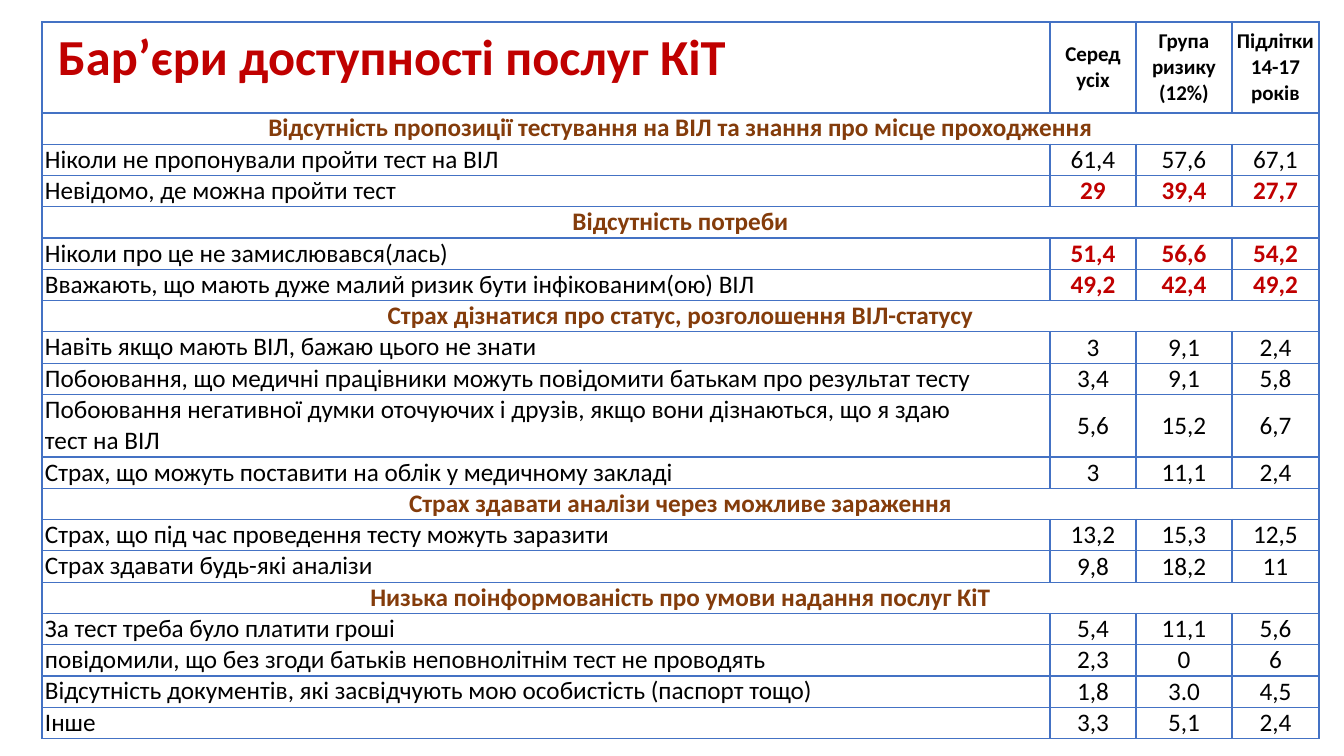
from dataclasses import dataclass

from lxml import etree
from pptx import Presentation
from pptx import util as u
from pptx.dml.color import RGBColor
from pptx.enum import text
from pptx.oxml import ns
from pptx.table import Table, _Cell

PX = 914400 / 100.8
COLORS = {"black": "000000", "white": "FFFFFF", "red": "C00000",
          "brown": "843C0B", "border": "4472C4"}
FONT = "Calibri"
COLUMN_WIDTHS = (1008, 86, 96, 87)
TABLE_LEFT, TABLE_TOP, HEADER_HEIGHT = 42, 22, 91
LINE_HEIGHT = 31.3
ALIGN, ANCHOR = text.PP_ALIGN, text.MSO_ANCHOR


@dataclass(frozen=True)
class Barrier:
    label: str
    values: tuple[str, str, str]
    highlighted: bool = False


@dataclass(frozen=True)
class Section:
    title: str
    barriers: tuple[Barrier, ...]


TITLE = "Бар’єри доступності послуг КіТ"
GROUPS = ("Серед усіх", "Група ризику (12%)", "Підлітки\n14-17 років")
SECTIONS = (
    Section("Відсутність пропозиції тестування на ВІЛ та знання про місце проходження", (
        Barrier("Ніколи не пропонували пройти тест на ВІЛ", ("61,4", "57,6", "67,1")),
        Barrier("Невідомо, де можна пройти тест", ("29", "39,4", "27,7"), True),
    )),
    Section("Відсутність потреби", (
        Barrier("Ніколи про це не замислювався(лась)", ("51,4", "56,6", "54,2"), True),
        Barrier("Вважають, що мають дуже малий ризик бути інфікованим(ою) ВІЛ",
                ("49,2", "42,4", "49,2"), True),
    )),
    Section("Страх дізнатися про статус, розголошення ВІЛ-статусу", (
        Barrier("Навіть якщо мають ВІЛ, бажаю цього не знати", ("3", "9,1", "2,4")),
        Barrier("Побоювання, що медичні працівники можуть повідомити батькам про результат тесту",
                ("3,4", "9,1", "5,8")),
        Barrier("Побоювання негативної думки оточуючих і друзів, якщо вони дізнаються, що я здаю\n"
                "тест на ВІЛ", ("5,6", "15,2", "6,7")),
        Barrier("Страх, що можуть поставити на облік у медичному закладі", ("3", "11,1", "2,4")),
    )),
    Section("Страх здавати аналізи через можливе зараження", (
        Barrier("Страх, що під час проведення тесту можуть заразити", ("13,2", "15,3", "12,5")),
        Barrier("Страх здавати будь-які аналізи", ("9,8", "18,2", "11")),
    )),
    Section("Низька поінформованість про умови надання послуг КіТ", (
        Barrier("За тест треба було платити гроші", ("5,4", "11,1", "5,6")),
        Barrier("повідомили, що без згоди батьків неповнолітнім тест не проводять",
                ("2,3", "0", "6")),
        Barrier("Відсутність документів, які засвідчують мою особистість (паспорт тощо)",
                ("1,8", "3.0", "4,5")),
        Barrier("Інше", ("3,3", "5,1", "2,4")),
    )),
)


def emu(pixels: float) -> u.Emu:
    return u.Emu(round(pixels * PX))


def style_cell(cell: _Cell, row: int) -> None:
    """Draw the borders, then the fill; the line under the header is thicker."""
    properties = cell._tc.get_or_add_tcPr()
    thick_side = {0: "B", 1: "T"}.get(row)
    for side in "LRTB":
        width = u.Pt(2 if side == thick_side else 1)
        line = etree.SubElement(properties, ns.qn(f"a:ln{side}"), w=str(width))
        fill = etree.SubElement(line, ns.qn("a:solidFill"))
        etree.SubElement(fill, ns.qn("a:srgbClr"), val=COLORS["border"])
    cell.fill.solid()
    cell.fill.fore_color.rgb = RGBColor.from_string(COLORS["white"])


def write_cell(cell: _Cell, content: str, *, size: int = 18, color: str = "black",
               bold: bool = False, align: ALIGN = ALIGN.CENTER, anchor: ANCHOR = ANCHOR.MIDDLE,
               left: int = 3, bottom: int = 0) -> None:
    cell.margin_left, cell.margin_right = emu(left), emu(3)
    cell.margin_top, cell.margin_bottom = 0, emu(bottom)
    cell.vertical_anchor = anchor
    cell.text_frame.text = content
    for paragraph in cell.text_frame.paragraphs:
        paragraph.alignment = align
        font = paragraph.runs[0].font
        font.name, font.size, font.bold = FONT, u.Pt(size), bold
        font.color.rgb = RGBColor.from_string(COLORS[color])


def write_section(table: Table, row: int, title: str) -> None:
    heading = table.cell(row, 0)
    heading.merge(table.cell(row, len(COLUMN_WIDTHS) - 1))
    write_cell(heading, title, color="brown", bold=True, anchor=ANCHOR.TOP)


def write_barrier(table: Table, row: int, barrier: Barrier) -> None:
    write_cell(table.cell(row, 0), barrier.label, align=ALIGN.JUSTIFY, anchor=ANCHOR.TOP)
    for column, value in enumerate(barrier.values, 1):
        write_cell(table.cell(row, column), value, bold=barrier.highlighted,
                   color="red" if barrier.highlighted else "black")


def main() -> None:
    presentation = Presentation()
    presentation.slide_width, presentation.slide_height = emu(1344), emu(756)
    slide = presentation.slides.add_slide(presentation.slide_layouts[6])

    # Table grid
    entries = [entry for section in SECTIONS for entry in (section, *section.barriers)]
    heights = [HEADER_HEIGHT] + [
        LINE_HEIGHT * (1 + entry.label.count("\n") if isinstance(entry, Barrier) else 1)
        for entry in entries]
    table = slide.shapes.add_table(
        len(heights), len(COLUMN_WIDTHS), emu(TABLE_LEFT), emu(TABLE_TOP),
        emu(sum(COLUMN_WIDTHS)), emu(sum(heights))).table
    table.first_row = table.horz_banding = False
    for column, width in zip(table.columns, COLUMN_WIDTHS):
        column.width = emu(width)
    for number, (row, height) in enumerate(zip(table.rows, heights)):
        row.height = emu(height)
        for cell in row.cells:
            style_cell(cell, number)

    # Header
    write_cell(table.cell(0, 0), TITLE, size=36, color="red", bold=True,
               align=ALIGN.JUSTIFY, anchor=ANCHOR.BOTTOM, left=16, bottom=24)
    for column, group in enumerate(GROUPS, 1):
        write_cell(table.cell(0, column), group, size=15, bold=True)

    # Sections and barriers
    for number, entry in enumerate(entries, 1):
        if isinstance(entry, Section):
            write_section(table, number, entry.title)
        else:
            write_barrier(table, number, entry)

    presentation.save("out.pptx")


if __name__ == "__main__":
    main()
